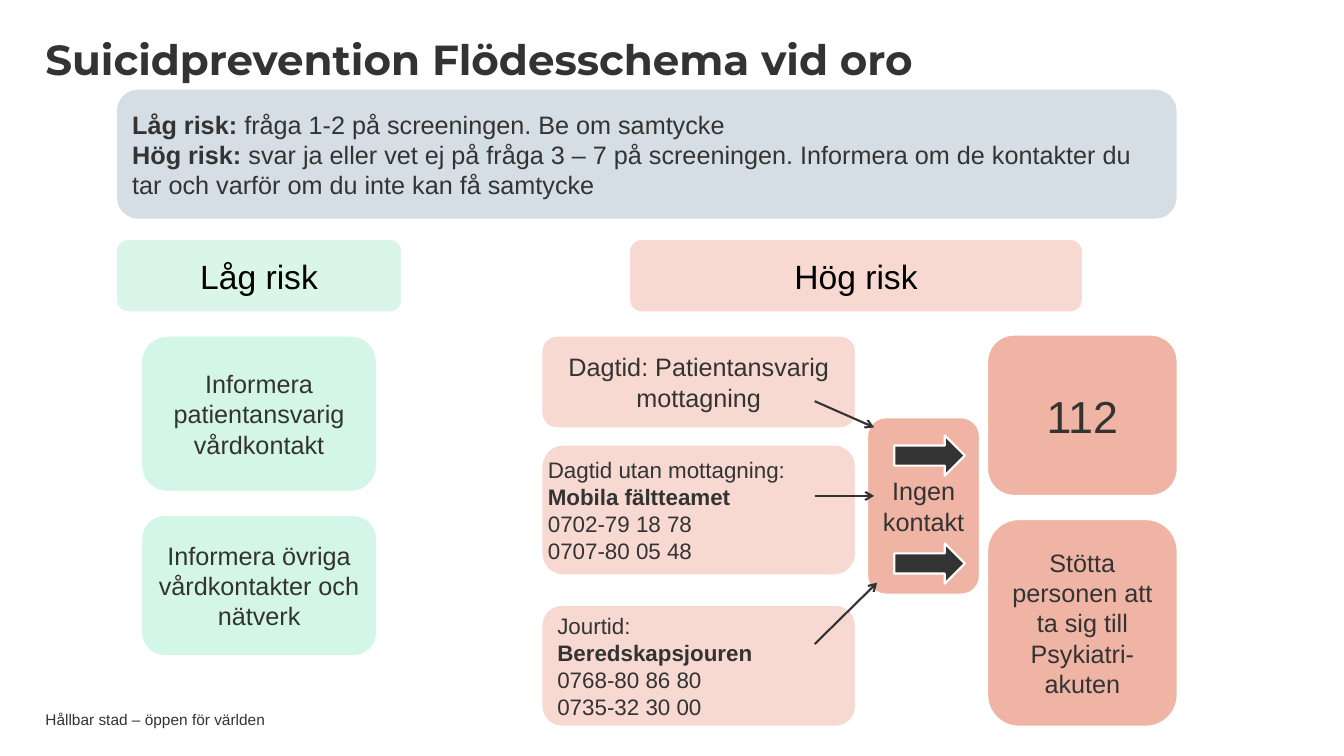
from dataclasses import dataclass

from lxml import etree
from pptx import Presentation, util as u
from pptx.dml.color import RGBColor
from pptx.enum import shapes, text
from pptx.oxml.ns import qn


@dataclass(frozen=True)
class Theme:
    font: str = "Arial"
    head: str = "Montserrat"
    ink: str = "333333"
    black: str = "000000"
    white: str = "FFFFFF"
    grey: str = "D4DEE4"
    mint: str = "DAF6EB"
    green: str = "D4F6E8"
    pink: str = "F7D9D2"
    coral: str = "F0B4A4"
    title: int = 30
    big: int = 32
    label: int = 24
    body: int = 18
    small: int = 16
    foot: int = 11
    line: float = 1.5


T = Theme()

# Paragraphs are lists of (words, bold) runs.
TITLE = [[("Suicidprevention Flödesschema vid oro", True)]]
FOOT = [[("Hållbar stad – öppen för världen", False)]]
RULES = [
    [("Låg risk: ", True), ("fråga 1-2 på screeningen. Be om samtycke", False)],
    [("Hög risk: ", True),
     ("svar ja eller vet ej på fråga 3 – 7 på screeningen. Informera om de "
      "kontakter du tar och varför om du inte kan få samtycke", False)],
]


def plain(*lines):
    return [[(line, False)] for line in lines]


def contact(when, team, *phones):
    return plain(when) + [[(team, True)]] + plain(*phones)


# Columns: left, width.  Rows: top, height.
COLS = {
    "wide": (1.15, 10.53), "low": (1.15, 2.84), "high": (6.24, 4.5),
    "inform": (1.4, 2.34), "call": (5.37, 3.12),
    "none": (8.6, 1.12), "act": (9.79, 1.89),
}
ROWS = {
    "rules": (0.88, 1.3), "label": (2.37, 0.73),
    "inform1": (3.33, 1.55), "inform2": (5.11, 1.4),
    "call1": (3.33, 0.92), "call2": (4.41, 1.3), "call3": (6, 1.21),
    "none": (4.14, 1.76), "act1": (3.32, 1.6), "act2": (5.15, 2.06),
}
PAD = (0.1, 0.05)

# Column, row, fill, size, text colour, centred, padding, paragraphs
BOXES = [
    ("wide", "rules", T.grey, T.body, T.ink, False, PAD, RULES),
    ("low", "label", T.mint, T.label, T.black, True, PAD, plain("Låg risk")),
    ("high", "label", T.pink, T.label, T.black, True, PAD, plain("Hög risk")),
    ("call", "call1", T.pink, T.body, T.ink, True, PAD,
     plain("Dagtid: Patientansvarig mottagning")),
    ("call", "call2", T.pink, T.small, T.ink, False, (0, 0),
     contact("Dagtid utan mottagning:", "Mobila fältteamet",
             "0702-79 18 78", "0707-80 05 48")),
    ("call", "call3", T.pink, T.small, T.ink, False, PAD,
     contact("Jourtid:", "Beredskapsjouren", "0768-80 86 80", "0735-32 30 00")),
    ("act", "act1", T.coral, T.big, T.ink, True, PAD, plain("112")),
    ("act", "act2", T.coral, T.body, T.ink, True, PAD,
     plain("Stötta personen att ta sig till Psykiatri-", "akuten")),
    ("inform", "inform1", T.green, T.body, T.ink, True, PAD,
     plain("Informera patientansvarig vårdkontakt")),
    ("inform", "inform2", T.green, T.body, T.ink, True, PAD,
     plain("Informera övriga vårdkontakter och nätverk")),
    ("none", "none", T.coral, T.body, T.ink, True, (0.05, 0.05),
     plain("Ingen kontakt")),
]

START = 8.08
LINKS = [(3.98, 8.67, 4.24), (4.92, 8.67, 4.92), (6.39, 8.7, 5.78)]
ARROW = (0.7, 0.4)
ARROW_LEFT = 8.87
ARROW_TOPS = (4.32, 5.39)

deck = Presentation()
deck.slide_width, deck.slide_height = u.Inches(13.33), u.Inches(7.5)
slide = deck.slides.add_slide(deck.slide_layouts[6])


def color(code):
    return RGBColor.from_string(code)


def write(shape, paras, size, ink=T.ink, mid=False, pad=PAD, face=T.font):
    frame = shape.text_frame
    frame.word_wrap = True
    frame.vertical_anchor = text.MSO_ANCHOR.MIDDLE
    frame.margin_left = frame.margin_right = u.Inches(pad[0])
    frame.margin_top = frame.margin_bottom = u.Inches(pad[1])
    for i, runs in enumerate(paras):
        para = frame.add_paragraph() if i else frame.paragraphs[0]
        para.alignment = text.PP_ALIGN.CENTER if mid else text.PP_ALIGN.LEFT
        for words, bold in runs:
            run = para.add_run()
            run.text = words
            font = run.font
            font.name, font.size, font.bold = face, u.Pt(size), bold
            font.color.rgb = color(ink)


def block(kind, left, top, width, height, fill):
    shape = slide.shapes.add_shape(kind, *map(u.Inches, (left, top, width, height)))
    shape.shadow.inherit = False
    shape.fill.solid()
    shape.fill.fore_color.rgb = color(fill)
    shape.line.color.rgb = color(T.white)
    shape.line.width = u.Pt(T.line)
    return shape


def label(left, top, width, height):
    return slide.shapes.add_textbox(*map(u.Inches, (left, top, width, height)))


def link(x1, y1, x2, y2):
    wire = slide.shapes.add_connector(
        shapes.MSO_CONNECTOR.STRAIGHT, *map(u.Inches, (x1, y1, x2, y2)))
    wire.line.color.rgb = color(T.ink)
    wire.line.width = u.Pt(T.line)
    etree.SubElement(wire.line._get_or_add_ln(), qn("a:tailEnd"), type="arrow")
    etree.SubElement(wire._element.spPr, qn("a:effectLst"))


write(label(0.45, 7.06, 9.45, 0.16), FOOT, T.foot, pad=(0, 0))
title = label(0.45, 0.18, 10.03, 0.86)
write(title, TITLE, T.title, pad=(0, 0.05), face=T.head)
title.text_frame.paragraphs[0].line_spacing = 0.9

for col, row, fill, size, ink, mid, pad, paras in BOXES:
    (left, width), (top, height) = COLS[col], ROWS[row]
    box = block(shapes.MSO_SHAPE.ROUNDED_RECTANGLE, left, top, width, height, fill)
    write(box, paras, size, ink, mid, pad)

for y1, x2, y2 in LINKS:
    link(START, y1, x2, y2)

for top in ARROW_TOPS:
    block(shapes.MSO_SHAPE.RIGHT_ARROW, ARROW_LEFT, top, *ARROW, T.ink)

deck.save("out.pptx")
